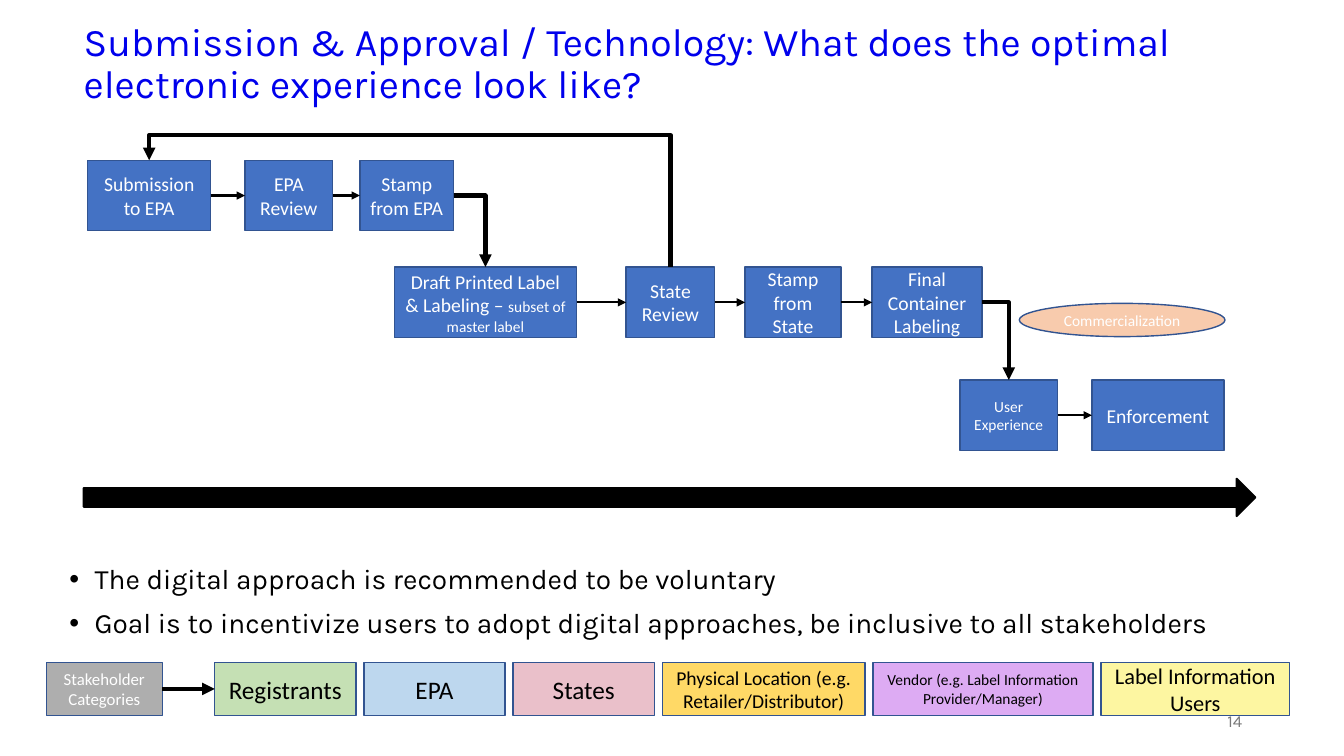
from collections import namedtuple
from dataclasses import dataclass
from itertools import pairwise

from lxml.etree import SubElement
from pptx import Presentation
from pptx.dml.color import RGBColor
from pptx.enum.shapes import MSO_CONNECTOR, MSO_SHAPE
from pptx.enum.text import MSO_ANCHOR, MSO_AUTO_SIZE, PP_ALIGN
from pptx.oxml.ns import qn
from pptx.util import Inches, Pt

Box = namedtuple("Box", "left top width height")
TOP, RIGHT, LEFT = 0, 3, 1


@dataclass(frozen=True)
class Theme:
    heading_font: str = "Karla"
    label_font: str = "Calibri"
    title: str = "0000EC"
    step: str = "4472C4"
    outline: str = "325491"
    milestone: str = "F8CBAD"
    legend_head: str = "AEAEAE"
    number: str = "797979"
    black: str = "000000"
    white: str = "FFFFFF"
    title_size: int = 28
    bullet_size: int = 20
    legend_size: int = 18
    step_size: int = 14
    note_size: int = 12
    small_size: int = 11
    thin: float = 1.5
    thick: float = 3


THEME = Theme()


def place(box):
    return [Inches(length) for length in box]


def add_run(paragraph, text, size, color, font):
    run = paragraph.add_run()
    run.text = text
    run.font.size = Pt(size)
    run.font.name = font
    run.font.color.rgb = RGBColor.from_string(color)


def add_block(slide, box, fill, runs=(), color=THEME.white, kind=MSO_SHAPE.RECTANGLE,
              outline=THEME.outline, weight=1):
    """Filled shape with a centred label made of (text, size) runs."""
    block = slide.shapes.add_shape(kind, *place(box))
    block.shadow.inherit = False
    block.fill.solid()
    block.fill.fore_color.rgb = RGBColor.from_string(fill)
    block.line.color.rgb = RGBColor.from_string(outline)
    block.line.width = Pt(weight)
    frame = block.text_frame
    frame.word_wrap = True
    frame.vertical_anchor = MSO_ANCHOR.MIDDLE
    frame.paragraphs[0].alignment = PP_ALIGN.CENTER
    for text, size in runs:
        add_run(frame.paragraphs[0], text, size, color, THEME.label_font)
    return block


def join(slide, source, target, weight, start=RIGHT, end=LEFT, kind=MSO_CONNECTOR.STRAIGHT):
    """Black arrow glued to one side of each block."""
    arrow = slide.shapes.add_connector(kind, 0, 0, 0, 0)
    arrow.begin_connect(source, start)
    arrow.end_connect(target, end)
    arrow.line.color.rgb = RGBColor.from_string(THEME.black)
    arrow.line.width = Pt(weight)
    SubElement(arrow.line._get_or_add_ln(), qn("a:tailEnd"), type="triangle")
    SubElement(arrow._element.spPr, qn("a:effectLst"))
    return arrow


def join_down(slide, source, target):
    """One-bend arrow from a right side down to a top side."""
    arrow = join(slide, source, target, THEME.thick, RIGHT, TOP, MSO_CONNECTOR.ELBOW)
    arrow._element.spPr.find(qn("a:prstGeom")).set("prst", "bentConnector2")


def join_back(slide, source, target, rise):
    """Two-bend arrow from top to top, passing above the target by rise."""
    arrow = join(slide, source, target, THEME.thick, TOP, TOP, MSO_CONNECTOR.ELBOW)
    span, drop = arrow.width, arrow.height
    middle_x, middle_y = arrow.left + span // 2, arrow.top + drop // 2
    arrow.left, arrow.top = middle_x - drop // 2, middle_y - span // 2
    arrow.width, arrow.height = drop, span
    xfrm = arrow._element.spPr.find(qn("a:xfrm"))
    for flip in ("flipH", "flipV"):
        xfrm.attrib.pop(flip, None)
    xfrm.set("rot", str(270 * 60000))
    xfrm.set("flipV", "1")
    guides = arrow._element.spPr.find(qn("a:prstGeom")).get_or_add_avLst()
    bend = round((1 + Inches(rise) / drop) * 100000)
    SubElement(guides, qn("a:gd"), name="adj1", fmla=f"val {bend}")


def build_title(slide, box):
    title = slide.shapes.title
    title.left, title.top, title.width, title.height = place(box)
    frame = title.text_frame
    frame.word_wrap = True
    frame.auto_size = MSO_AUTO_SIZE.NONE
    frame.vertical_anchor = MSO_ANCHOR.MIDDLE
    heading = frame.paragraphs[0]
    heading.alignment = PP_ALIGN.LEFT
    heading.line_spacing = 0.9
    add_run(heading, "Submission & Approval / Technology: What does the optimal "
            "electronic experience look like?", THEME.title_size, THEME.title, THEME.heading_font)


def build_flow(slide, box):
    rise, step_height = 0.25, 0.7
    row_tops = (rise, 1.31, 2.43)
    normal, small = THEME.step_size, THEME.small_size
    # Rows of steps: left offset, width, label runs
    rows = (
        ((0, 1.22, [("Submission to EPA", normal)]),
         (1.56, 0.87, [("EPA Review", normal)]),
         (2.7, 0.93, [("Stamp from EPA", normal)])),
        ((3.04, 1.81, [("Draft Printed Label & Labeling – ", normal),
                       ("subset of master label", small)]),
         (5.34, 0.88, [("State Review", normal)]),
         (6.52, 0.95, [("Stamp from State", normal)]),
         (7.78, 1.09, [("Final Container Labeling", normal)])),
        ((8.65, 0.97, [("User Experience", small)]),
         (9.96, 1.31, [("Enforcement", normal)])),
    )
    stages = []
    for row_top, row in zip(row_tops, rows):
        steps = [add_block(slide, Box(box.left + offset, box.top + row_top, width, step_height),
                           THEME.step, label) for offset, width, label in row]
        for source, target in pairwise(steps):
            join(slide, source, target, THEME.thin)
        stages.append(steps)

    # Links between rows
    for upper, lower in pairwise(stages):
        join_down(slide, upper[-1], lower[0])
    submission, state_review = stages[0][0], stages[1][1]
    join_back(slide, state_review, submission, rise)

    # Milestone
    add_block(slide, Box(box.left + 9.24, box.top + 1.67, 2.04, 0.33), THEME.milestone,
              [("Commercialization", small)], kind=MSO_SHAPE.OVAL)


def build_timeline(slide, box):
    add_block(slide, box, THEME.black, kind=MSO_SHAPE.RIGHT_ARROW,
              outline=THEME.black, weight=THEME.thin)


def build_bullets(slide, box):
    frame = slide.shapes.add_textbox(*place(box)).text_frame
    frame.word_wrap = True
    points = ("The digital approach is recommended to be voluntary",
              "Goal is to incentivize users to adopt digital approaches, "
              "be inclusive to all stakeholders")
    for index, point in enumerate(points):
        paragraph = frame.add_paragraph() if index else frame.paragraphs[0]
        paragraph.line_spacing = 0.9
        paragraph.space_after = Pt(10)
        properties = paragraph._p.get_or_add_pPr()
        properties.set("marL", str(Inches(0.25)))
        properties.set("indent", str(-Inches(0.25)))
        SubElement(properties, qn("a:buFont"), typeface="Arial")
        SubElement(properties, qn("a:buChar"), char="•")
        add_run(paragraph, point, THEME.bullet_size, THEME.black, THEME.heading_font)


def build_legend(slide, box):
    gap = 0.08
    categories = (
        ("Registrants", 1.4, "C5E0B4", THEME.legend_size),
        ("EPA", 1.4, "BDD7EE", THEME.legend_size),
        ("States", 1.4, "EAC0CA", THEME.legend_size),
        ("Physical Location (e.g. Retailer/Distributor)", 2.01, "FFD966", THEME.step_size),
        ("Vendor (e.g. Label Information Provider/Manager)", 2.18, "DDABF3", THEME.small_size),
        ("Label Information Users", 1.87, "FDF6A1", 16),
    )
    heading = add_block(slide, box._replace(width=1.15), THEME.legend_head,
                        [("Stakeholder Categories", THEME.note_size)])
    left = box.left + 1.67
    blocks = []
    for name, width, fill, size in categories:
        blocks.append(add_block(slide, box._replace(left=left, width=width), fill,
                                [(name, size)], THEME.black))
        left += width + gap
    join(slide, heading, blocks[0], THEME.thick)


def build_page_number(slide, box):
    frame = slide.shapes.add_textbox(*place(box)).text_frame
    frame.word_wrap = True
    frame.vertical_anchor = MSO_ANCHOR.MIDDLE
    frame.paragraphs[0].alignment = PP_ALIGN.RIGHT
    add_run(frame.paragraphs[0], "14", THEME.note_size, THEME.number, THEME.heading_font)


def main():
    deck = Presentation()
    deck.slide_width, deck.slide_height = Inches(13.33), Inches(7.5)
    slide = deck.slides.add_slide(deck.slide_layouts.get_by_name("Title Only"))
    build_title(slide, Box(0.73, 0.26, 11.95, 0.77))
    build_flow(slide, Box(0.87, 1.34, 11.28, 3.13))
    build_timeline(slide, Box(0.83, 4.75, 11.62, 0.37))
    build_bullets(slide, Box(0.59, 5.56, 12.33, 0.93))
    build_legend(slide, Box(0.46, 6.57, 12.33, 0.53))
    build_page_number(slide, Box(9.42, 6.95, 3, 0.4))
    deck.save("out.pptx")


if __name__ == "__main__":
    main()
